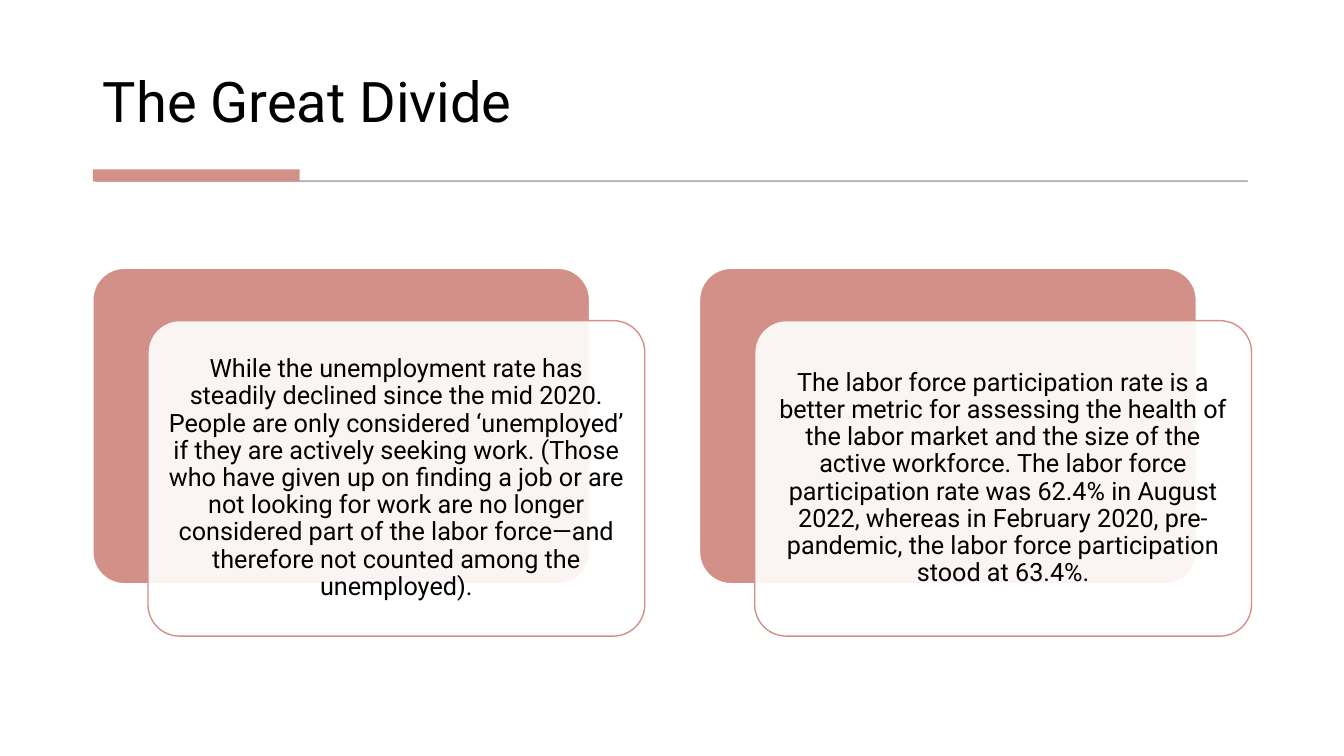
from lxml import etree
from pptx import Presentation
from pptx.dml.color import RGBColor
from pptx.enum.shapes import MSO_SHAPE
from pptx.enum.text import MSO_ANCHOR, MSO_AUTO_SIZE, PP_ALIGN
from pptx.oxml.ns import qn
from pptx.util import Cm, Pt

RECT, ROUND = MSO_SHAPE.RECTANGLE, MSO_SHAPE.ROUNDED_RECTANGLE
BOTTOM, MIDDLE = MSO_ANCHOR.BOTTOM, MSO_ANCHOR.MIDDLE
LEFT, CENTER = PP_ALIGN.LEFT, PP_ALIGN.CENTER
NO_FIT = MSO_AUTO_SIZE.NONE

# Content
TITLE = "The Great Divide"
CARDS = [
    "While the unemployment rate has steadily declined since the mid 2020. "
    "People are only considered ‘unemployed’ if they are actively seeking work. "
    "(Those who have given up on finding a job or are not looking for work are "
    "no longer considered part of the labor force—and therefore not counted "
    "among the unemployed).",
    "The labor force participation rate is a better metric for assessing the "
    "health of the labor market and the size of the active workforce. The labor "
    "force participation rate was 62.4% in August 2022, whereas in February 2020, "
    "pre-pandemic, the labor force participation stood at 63.4%.",
]

# Style
FONT = "Roboto"
BLACK = RGBColor(0x00, 0x00, 0x00)
WHITE = RGBColor(0xFF, 0xFF, 0xFF)
ROSE = RGBColor(0xD3, 0x90, 0x89)
GRAY = RGBColor(0x59, 0x59, 0x59)

# Layout in centimetres
MARGIN = 2.34
CARD_W, CARD_H = 12.52, 7.95
CARD_TOP, CARD_STEP = 6.76, 15.29
SHIFT_X, SHIFT_Y = 1.39, 1.32
INSET = 0.18


def set_alpha(fill_parent, percent):
    color = fill_parent.find(qn("a:solidFill"))[0]
    etree.SubElement(color, qn("a:alpha"), val=str(percent * 1000))


def add_box(s, kind, x, y, w, h, fill, line=None, line_pt=1):
    sp = s.shapes.add_shape(kind, Cm(x), Cm(y), Cm(w), Cm(h))
    sp.shadow.inherit = False
    sp.fill.solid()
    sp.fill.fore_color.rgb = fill
    if line is None:
        sp.line.fill.background()
    else:
        sp.line.color.rgb = line
        sp.line.width = Pt(line_pt)
    if kind == ROUND:
        sp.adjustments[0] = 0.1
    return sp


def write(tf, text, size, align, anchor):
    tf.word_wrap = True
    tf.auto_size = NO_FIT
    tf.vertical_anchor = anchor
    p = tf.paragraphs[0]
    p.alignment = align
    p.line_spacing = 0.9
    r = p.add_run()
    r.text = text
    r.font.name = FONT
    r.font.size = Pt(size)
    r.font.color.rgb = BLACK


prs = Presentation()
prs.slide_width, prs.slide_height = Cm(33.87), Cm(19.05)
s = prs.slides.add_slide(prs.slide_layouts[5])

# Title
title = s.shapes.title
title.left, title.top = Cm(MARGIN), Cm(0.71)
title.width, title.height = Cm(29.18), Cm(2.82)
write(title.text_frame, TITLE, 40, LEFT, BOTTOM)

# Thin rule and accent bar under the title
rule = add_box(s, RECT, 2.41, 4.55, 29.03, 0.03, GRAY, GRAY, 0.75)
set_alpha(rule._element.spPr, 30)
set_alpha(rule.line._ln, 30)
add_box(s, RECT, MARGIN, 4.27, 5.21, 0.3, ROSE)

# Cards: rose panel behind, translucent text panel in front
for i, text in enumerate(CARDS):
    x = MARGIN + i * CARD_STEP
    add_box(s, ROUND, x, CARD_TOP, CARD_W, CARD_H, ROSE, WHITE)
    card = add_box(s, ROUND, x + SHIFT_X, CARD_TOP + SHIFT_Y,
                   CARD_W, CARD_H, WHITE, ROSE)
    set_alpha(card._element.spPr, 90)
    tf = card.text_frame
    tf.margin_left = tf.margin_right = Cm(INSET)
    tf.margin_top = tf.margin_bottom = Cm(INSET)
    write(tf, text, 18, CENTER, MIDDLE)

prs.save("out.pptx")
